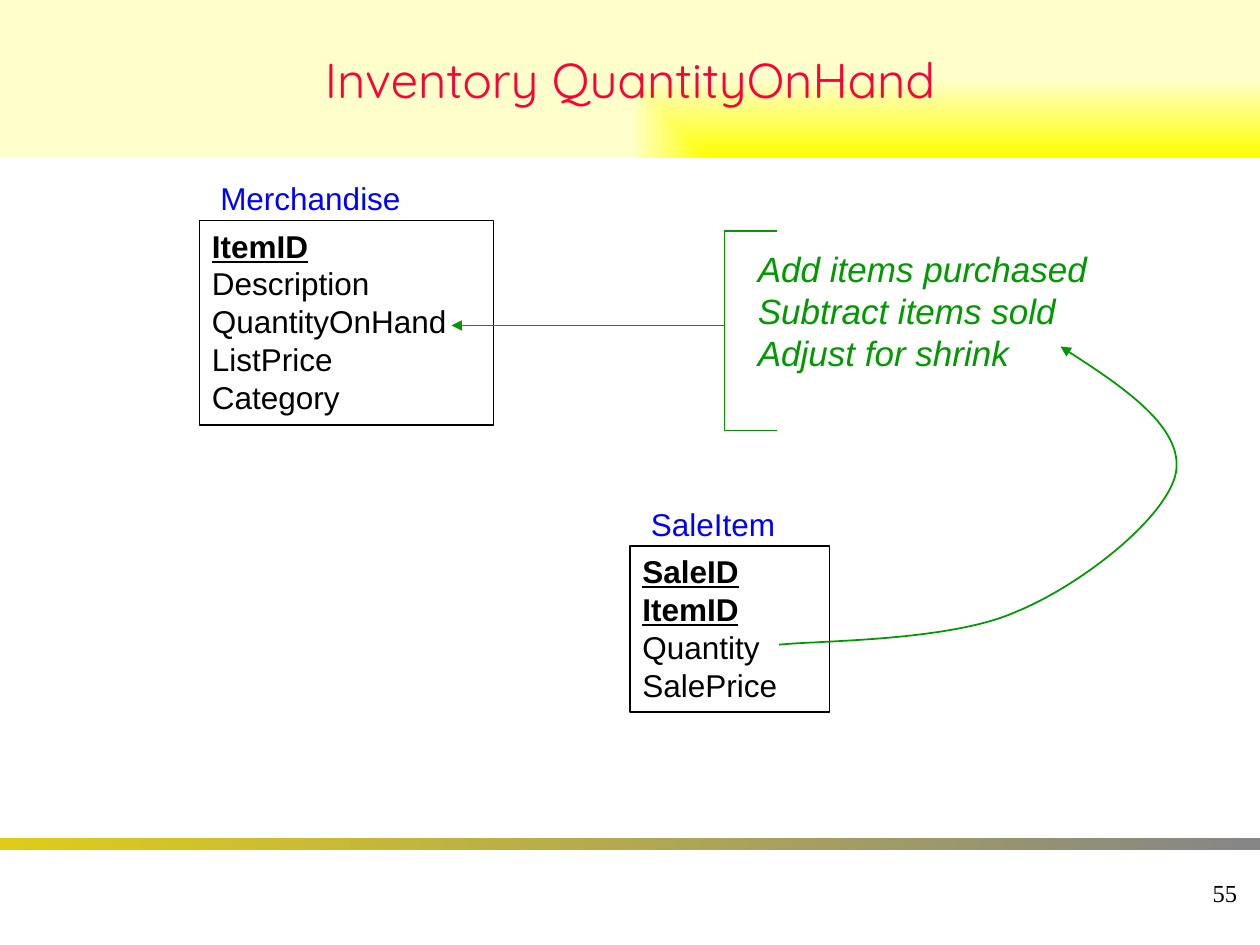
"""Build the Inventory QuantityOnHand slide on a grid of 120 columns by 90 rows."""
from lxml import etree
from pptx import Presentation
from pptx import util as u
from pptx.dml.color import RGBColor
from pptx.enum import shapes, text
from pptx.oxml import parse_xml
from pptx.oxml.ns import nsdecls, qn

COLORS = {"title": "FF0033", "ink": "000000", "label": "0000FF", "note": "009900",
          "gold": "E0CB1B", "gray": "868686", "yellow": "FFFF00", "cream": "FFFFCC"}

deck = Presentation()
deck.slide_width, deck.slide_height = u.Inches(10), u.Inches(7.5)
page = deck.slides.add_slide(deck.slide_layouts[6])
unit = deck.slide_width / 120


def grid(*cells):
    return [round(cell * unit) for cell in cells]


def write(box, lines, size=18, font="Arial", color="ink", italic=False, keys=0, wrap=True,
          align=text.PP_ALIGN.LEFT, anchor=text.MSO_ANCHOR.TOP, fit=text.MSO_AUTO_SIZE.NONE):
    frame = box.text_frame
    frame.word_wrap, frame.vertical_anchor, frame.auto_size = wrap, anchor, fit
    for index, line in enumerate(lines):
        para = frame.add_paragraph() if index else frame.paragraphs[0]
        para.alignment = align
        span = para.add_run()
        span.text = line
        span.font.name, span.font.size = font, u.Pt(size)
        span.font.bold = span.font.underline = index < keys
        span.font.italic = italic
        span.font.color.rgb = RGBColor.from_string(COLORS[color])


bands = [
    ((0, 79.8, 120, 1.2), "gold", "gray", '<a:lin ang="0" scaled="1"/>'),
    ((0, 0, 120, 15), "yellow", "cream",
     '<a:path path="rect"><a:fillToRect l="100000" t="100000"/></a:path>'),
]
for place, start, end, direction in bands:
    band = page.shapes.add_shape(shapes.MSO_SHAPE.RECTANGLE, *grid(*place))
    band.shadow.inherit = False
    band.line.fill.background()
    fill = parse_xml(
        f'<a:gradFill {nsdecls("a")} rotWithShape="1"><a:gsLst>'
        f'<a:gs pos="0"><a:srgbClr val="{COLORS[start]}"/></a:gs>'
        f'<a:gs pos="100000"><a:srgbClr val="{COLORS[end]}"/></a:gs>'
        f'</a:gsLst>{direction}</a:gradFill>')
    band.element.spPr.find(qn("a:prstGeom")).addnext(fill)
write(band, ["Inventory QuantityOnHand"], size=28, font="Quicksand", color="title",
      align=text.PP_ALIGN.CENTER, anchor=text.MSO_ANCHOR.MIDDLE)

number = page.shapes.add_textbox(*grid(94, 82, 25, 6))
write(number, ["55"], size=14, font="Times New Roman", wrap=False,
      align=text.PP_ALIGN.RIGHT, anchor=text.MSO_ANCHOR.MIDDLE)

tables = [
    ("Merchandise", 19.6, (19, 21, 28, 19.5), 1,
     ["ItemID", "Description", "QuantityOnHand", "ListPrice", "Category"]),
    ("SaleItem", 14.3, (60, 52, 19, 15.8), 2,
     ["SaleID", "ItemID", "Quantity", "SalePrice"]),
]
for name, name_width, place, keys, fields in tables:
    entity = page.shapes.add_shape(shapes.MSO_SHAPE.RECTANGLE, *grid(*place))
    entity.shadow.inherit = False
    entity.fill.background()
    entity.line.color.rgb = RGBColor.from_string(COLORS["ink"])
    entity.line.width = u.Pt(1)
    write(entity, fields, keys=keys, fit=text.MSO_AUTO_SIZE.SHAPE_TO_FIT_TEXT)
    label = page.shapes.add_textbox(*grid(place[0] + 0.8, place[1] - 4.5, name_width, 4.8))
    write(label, [name], color="label", wrap=False, fit=text.MSO_AUTO_SIZE.SHAPE_TO_FIT_TEXT)

note = page.shapes.add_textbox(*grid(71, 23, 37, 17.2))
write(note, ["Add items purchased", "Subtract items sold", "Adjust for shrink"], size=20,
      color="note", italic=True, fit=text.MSO_AUTO_SIZE.SHAPE_TO_FIT_TEXT)

outlines = []
for points in (
    [(74, 22), (69, 22), (69, 41), (74, 41)],
    [(74.2, 61.4), (77.9, 61), (90.4, 61.1), (96.7, 58.3), (103.1, 55.7),
     (111.2, 49.2), (112, 45), (112.7, 40.8), (106.8, 36.7), (101, 33)],
):
    builder = page.shapes.build_freeform(*grid(*points[0]))
    builder.add_line_segments([grid(*point) for point in points[1:]], close=False)
    outline = builder.convert_to_shape()
    outline.shadow.inherit = False
    outline.fill.background()
    outlines.append(outline)
bracket, curve = outlines

steps = list(curve.element.iter(qn("a:lnTo")))
for first in range(0, len(steps), 3):
    bend = etree.SubElement(steps[first].getparent(), qn("a:cubicBezTo"))
    for step in steps[first:first + 3]:
        bend.append(step[0])
        step.getparent().remove(step)

arrow = page.shapes.add_connector(shapes.MSO_CONNECTOR.STRAIGHT, *grid(69, 31, 43, 31))
etree.SubElement(arrow.element.spPr, qn("a:effectLst"))

for stroke in (bracket, curve, arrow):
    stroke.line.color.rgb = RGBColor.from_string(COLORS["note"])
    stroke.line.width = u.Pt(1)
for stroke in (curve, arrow):
    etree.SubElement(stroke.line._get_or_add_ln(), qn("a:tailEnd"), type="triangle")

deck.save("out.pptx")
